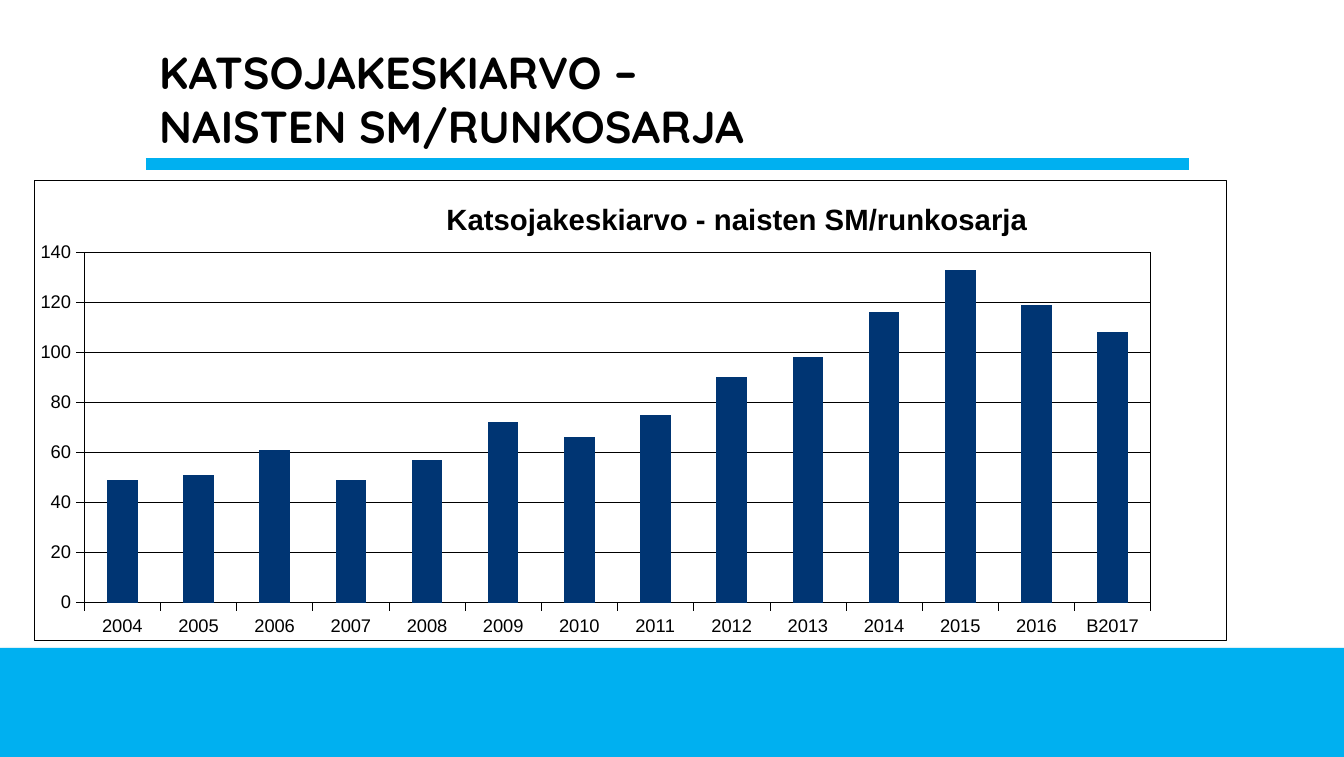
"""Build the slide on average attendance in the women's league."""
from typing import NamedTuple

from pptx import Presentation
from pptx.chart.data import CategoryChartData
from pptx.dml.color import RGBColor
from pptx.enum.chart import XL_CHART_TYPE, XL_TICK_MARK
from pptx.enum.shapes import MSO_CONNECTOR, MSO_SHAPE
from pptx.enum.text import MSO_ANCHOR
from pptx.oxml import parse_xml
from pptx.oxml.ns import nsdecls
from pptx.util import Emu, Pt

SCALE = 914400 / 134.4
BLUE, NAVY, BLACK, WHITE = "00B0F0", "003573", "000000", "FFFFFF"
HAIRLINE = 0.25


class Box(NamedTuple):
    left: int
    top: int
    width: int
    height: int


class Season(NamedTuple):
    label: str
    attendance: int


ATTENDANCES = (49, 51, 61, 49, 57, 72, 66, 75, 90, 98, 116, 133, 119, 108)
YEARS = [str(year) for year in range(2004, 2017)] + ["B2017"]
SEASONS = [Season(*pair) for pair in zip(YEARS, ATTENDANCES)]


def px(length: int) -> Emu:
    return Emu(round(length * SCALE))


def color(value: str) -> RGBColor:
    return RGBColor.from_string(value)


def set_font(font, name: str, size: float, bold: bool = False, ink: str = BLACK) -> None:
    font.name, font.size, font.bold = name, Pt(size), bold
    font.color.rgb = color(ink)


def set_line(line, ink: str, width: float) -> None:
    line.color.rgb, line.width = color(ink), Pt(width)


def add_text(slide, box: Box, text: str, **style) -> None:
    shape = slide.shapes.add_textbox(*map(px, box))
    frame = shape.text_frame
    frame.word_wrap, frame.vertical_anchor = True, MSO_ANCHOR.BOTTOM
    frame.text = text
    for run in frame.paragraphs[0].runs:
        set_font(run.font, **style)


def add_band(slide, box: Box) -> None:
    shape = slide.shapes.add_shape(MSO_SHAPE.RECTANGLE, *map(px, box))
    shape.fill.solid()
    shape.fill.fore_color.rgb = color(BLUE)
    shape.line.fill.background()
    shape._element.spPr.append(parse_xml(
        f'<a:effectLst {nsdecls("a")}><a:outerShdw blurRad="40000" dist="23000" '
        f'dir="5400000" rotWithShape="0"><a:srgbClr val="{BLACK}">'
        '<a:alpha val="35000"/></a:srgbClr></a:outerShdw></a:effectLst>'))


def add_rule(slide, left: int, right: int, y: int) -> None:
    connector = slide.shapes.add_connector(
        MSO_CONNECTOR.STRAIGHT, px(left), px(y), px(right), px(y))
    set_line(connector.line, BLUE, 6)
    connector._element.spPr.append(parse_xml(f'<a:effectLst {nsdecls("a")}/>'))


def set_layout(parent, index: int, **values) -> None:
    for layout in parent.xpath("c:layout"):
        parent.remove(layout)
    items = "".join(f'<c:{tag} val="{value}"/>' for tag, value in values.items())
    parent.insert(index, parse_xml(
        f'<c:layout {nsdecls("c")}><c:manualLayout>{items}</c:manualLayout></c:layout>'))


def frame_properties():
    return parse_xml(
        f'<c:spPr {nsdecls("c", "a")}><a:solidFill><a:srgbClr val="{WHITE}"/></a:solidFill>'
        f'<a:ln w="{Pt(HAIRLINE)}"><a:solidFill><a:srgbClr val="{BLACK}"/></a:solidFill>'
        '</a:ln></c:spPr>')


def style_axis(axis) -> None:
    axis.major_tick_mark, axis.minor_tick_mark = XL_TICK_MARK.OUTSIDE, XL_TICK_MARK.NONE
    set_font(axis.tick_labels.font, "Arial", 9.8)
    set_line(axis.format.line, BLACK, HAIRLINE)


def add_attendance_chart(slide, box: Box, plot_box: Box, title_left: int, title_top: int,
                         title: str, seasons: list[Season]) -> None:
    data = CategoryChartData(number_format="0")
    data.categories = [season.label for season in seasons]
    data.add_series("Series 1", [season.attendance for season in seasons])
    chart = slide.shapes.add_chart(
        XL_CHART_TYPE.COLUMN_CLUSTERED, *map(px, box), data).chart
    set_font(chart.font, "Arial", 8.2)
    chart.has_legend = False

    chart.has_title = True
    chart.chart_title.text_frame.text = title
    run = chart.chart_title.text_frame.paragraphs[0].runs[0]
    set_font(run.font, "Arial", 15.7, bold=True)
    set_layout(chart.chart_title._element, 1, xMode="edge", yMode="edge",
               x=title_left / box.width, y=title_top / box.height)

    plot = chart.plots[0]
    plot.gap_width, plot.vary_by_categories = 150, False
    fill = plot.series[0].format.fill
    fill.solid()
    fill.fore_color.rgb = color(NAVY)

    style_axis(chart.category_axis)
    value_axis = chart.value_axis
    style_axis(value_axis)
    value_axis.minimum_scale, value_axis.maximum_scale, value_axis.major_unit = 0, 140, 20
    value_axis.tick_labels.number_format = "0"
    value_axis.tick_labels.number_format_is_linked = False
    set_line(value_axis.major_gridlines.format.line, BLACK, HAIRLINE)

    chart_element = chart._chartSpace.xpath("c:chart")[0]
    plot_area = chart_element.xpath("c:plotArea")[0]
    set_layout(plot_area, 0, layoutTarget="inner", xMode="edge", yMode="edge",
               x=plot_box.left / box.width, y=plot_box.top / box.height,
               w=plot_box.width / box.width, h=plot_box.height / box.height)
    plot_area.append(frame_properties())
    chart_element.addnext(frame_properties())


def main() -> None:
    presentation = Presentation()
    presentation.slide_width, presentation.slide_height = px(1344), px(757)
    slide = presentation.slides.add_slide(presentation.slide_layouts[6])
    add_band(slide, Box(0, 648, 1344, 109))
    add_rule(slide, 146, 1189, 164)
    add_text(slide, Box(146, 0, 1043, 159), "KATSOJAKESKIARVO – \vNAISTEN SM/RUNKOSARJA",
             name="Quicksand", size=24, bold=True)
    add_attendance_chart(slide, Box(34, 180, 1192, 460), Box(50, 72, 1067, 351), 407, 15,
                         "Katsojakeskiarvo - naisten SM/runkosarja", SEASONS)
    presentation.save("out.pptx")


if __name__ == "__main__":
    main()
